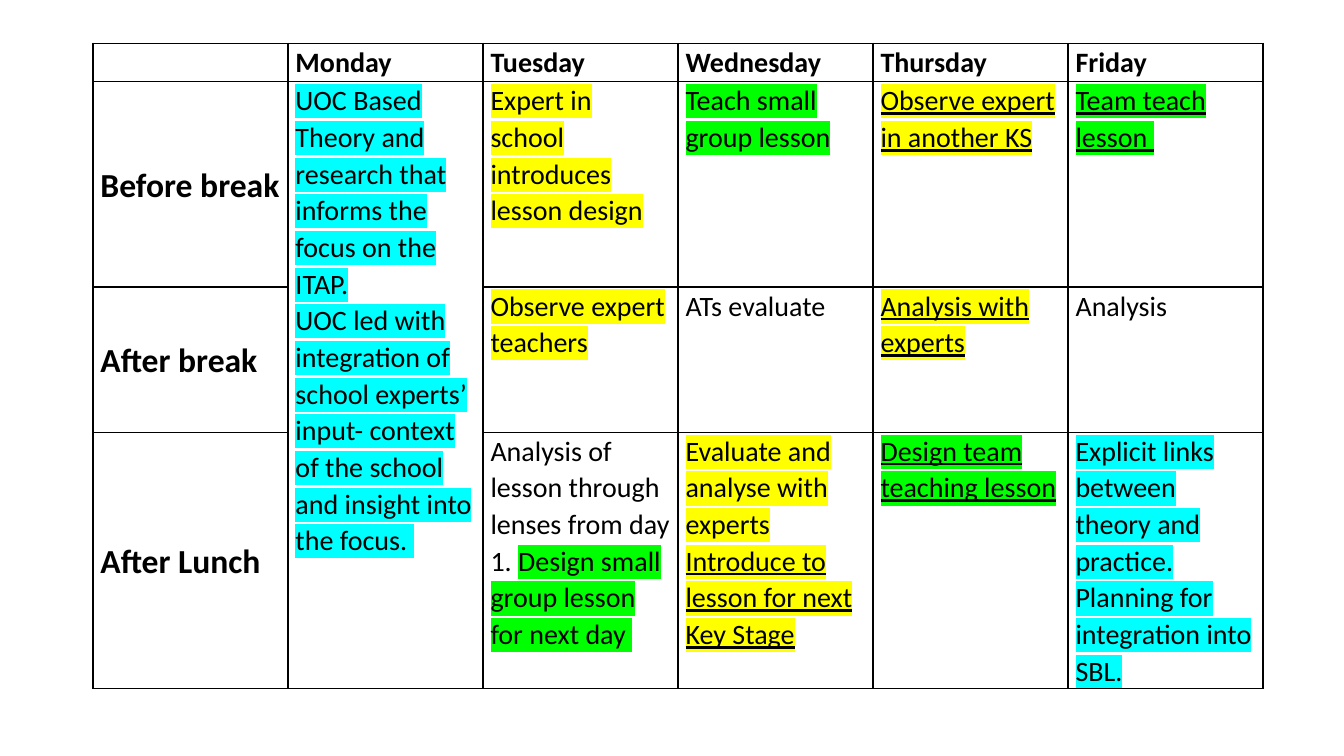
from dataclasses import dataclass

from lxml import etree
from pptx import Presentation
from pptx.dml.color import RGBColor
from pptx.enum.text import MSO_ANCHOR
from pptx.oxml.ns import qn
from pptx.table import _Cell
from pptx.text.text import _Paragraph
from pptx.util import Pt

MIDDLE = MSO_ANCHOR.MIDDLE
TOP = MSO_ANCHOR.TOP

COLORS = {
    "ink": "000000",
    "theory": "00FFFF",
    "expert": "FFFF00",
    "practice": "00FF00",
}
FONT = "Calibri"
LINE_SPACING = 1.07
BORDER_WIDTH = Pt(1)
BORDER_TAGS = ("a:lnL", "a:lnR", "a:lnT", "a:lnB")
CELL_FORMAT = {
    "margin_left": Pt(5.4),
    "margin_right": Pt(5.4),
    "margin_top": Pt(0),
    "margin_bottom": Pt(0),
}

TABLE_LEFT, TABLE_TOP = Pt(66.4), Pt(30.8)
DAY_WIDTH = Pt(139.3)
ROW_HEIGHTS = (Pt(27.6), Pt(146.6), Pt(103.7), Pt(183.4))
DAYS = ("Monday", "Tuesday", "Wednesday", "Thursday", "Friday")
SESSIONS = ("Before break", "After break", "After Lunch")


@dataclass(frozen=True)
class Phrase:
    text: str
    highlight: str = ""
    underline: bool = False
    bold: bool = False
    size: float = 20


@dataclass(frozen=True)
class Activity:
    row: int
    column: int
    paragraphs: tuple[tuple[Phrase, ...], ...]


ACTIVITIES = (
    Activity(1, 1, (
        (Phrase("UOC Based Theory and research that informs the focus on the ITAP.", "theory"),),
        (Phrase("UOC led with integration of school experts’ input- context of the school "
                "and insight into the focus. ", "theory"),),
    )),
    Activity(1, 2, ((Phrase("Expert in school introduces lesson design", "expert"),),)),
    Activity(1, 3, ((Phrase("Teach small group lesson", "practice"),),)),
    Activity(1, 4, ((Phrase("Observe expert in another KS", "expert", True),),)),
    Activity(1, 5, ((Phrase("Team teach lesson ", "practice", True),),)),
    Activity(2, 2, ((Phrase("Observe expert teachers", "expert"),),)),
    Activity(2, 3, ((Phrase("ATs evaluate"),),)),
    Activity(2, 4, ((Phrase("Analysis with experts", "expert", True),),)),
    Activity(2, 5, ((Phrase("Analysis"),),)),
    Activity(3, 2, ((
        Phrase("Analysis of lesson through lenses from day 1. "),
        Phrase("Design small group lesson for next day ", "practice"),
    ),)),
    Activity(3, 3, (
        (Phrase("Evaluate and analyse with experts", "expert"), Phrase(" ")),
        (Phrase("Introduce to lesson for next Key Stage", "expert", True),),
    )),
    Activity(3, 4, ((Phrase("Design team teaching lesson", "practice", True),),)),
    Activity(3, 5, (
        (Phrase("Explicit links between theory and practice.", "theory"),),
        (Phrase("Planning for integration into SBL.", "theory"),),
    )),
)


def add_phrase(paragraph: _Paragraph, phrase: Phrase) -> None:
    run = paragraph.add_run()
    run.text = phrase.text
    font_format = {
        "name": FONT,
        "size": Pt(phrase.size),
        "bold": phrase.bold,
        "underline": phrase.underline,
    }
    for attribute, value in font_format.items():
        setattr(run.font, attribute, value)
    run.font.color.rgb = RGBColor.from_string(COLORS["ink"])
    if phrase.highlight:
        highlight = etree.Element(qn("a:highlight"))
        etree.SubElement(highlight, qn("a:srgbClr"), val=COLORS[phrase.highlight])
        run.font._element.find(qn("a:solidFill")).addnext(highlight)


def write_cell(
    cell: _Cell, paragraphs: tuple[tuple[Phrase, ...], ...], anchor: MSO_ANCHOR = TOP
) -> None:
    cell.vertical_anchor = anchor
    frame = cell.text_frame
    for index, phrases in enumerate(paragraphs):
        paragraph = frame.add_paragraph() if index else frame.paragraphs[0]
        paragraph.line_spacing = LINE_SPACING
        for phrase in phrases:
            add_phrase(paragraph, phrase)


def format_cell(cell: _Cell) -> None:
    """Set the margins, clear the fill and rule all four sides."""
    for attribute, value in CELL_FORMAT.items():
        setattr(cell, attribute, value)
    cell.fill.background()
    properties = cell._tc.get_or_add_tcPr()
    for position, tag in enumerate(BORDER_TAGS):
        border = etree.Element(qn(tag), w=str(BORDER_WIDTH))
        fill = etree.SubElement(border, qn("a:solidFill"))
        etree.SubElement(fill, qn("a:srgbClr"), val=COLORS["ink"])
        properties.insert(position, border)


def main() -> None:
    presentation = Presentation()
    presentation.slide_width, presentation.slide_height = Pt(960), Pt(540)
    slide = presentation.slides.add_slide(presentation.slide_layouts[6])

    column_count = len(DAYS) + 1
    timetable = slide.shapes.add_table(
        len(ROW_HEIGHTS), column_count, TABLE_LEFT, TABLE_TOP,
        DAY_WIDTH * column_count, sum(ROW_HEIGHTS),
    ).table
    timetable.first_row = False
    timetable.horz_banding = False
    for column in timetable.columns:
        column.width = DAY_WIDTH
    for row, height in zip(timetable.rows, ROW_HEIGHTS):
        row.height = height
    for cell in timetable.iter_cells():
        format_cell(cell)
    timetable.cell(1, 1).merge(timetable.cell(len(SESSIONS), 1))

    for column_index, day in enumerate(DAYS, start=1):
        write_cell(timetable.cell(0, column_index), ((Phrase(day, bold=True),),))
    for row_index, session in enumerate(SESSIONS, start=1):
        heading = Phrase(session, bold=True, size=24)
        write_cell(timetable.cell(row_index, 0), ((heading,),), MIDDLE)
    for activity in ACTIVITIES:
        write_cell(timetable.cell(activity.row, activity.column), activity.paragraphs)

    presentation.save("out.pptx")


if __name__ == "__main__":
    main()
